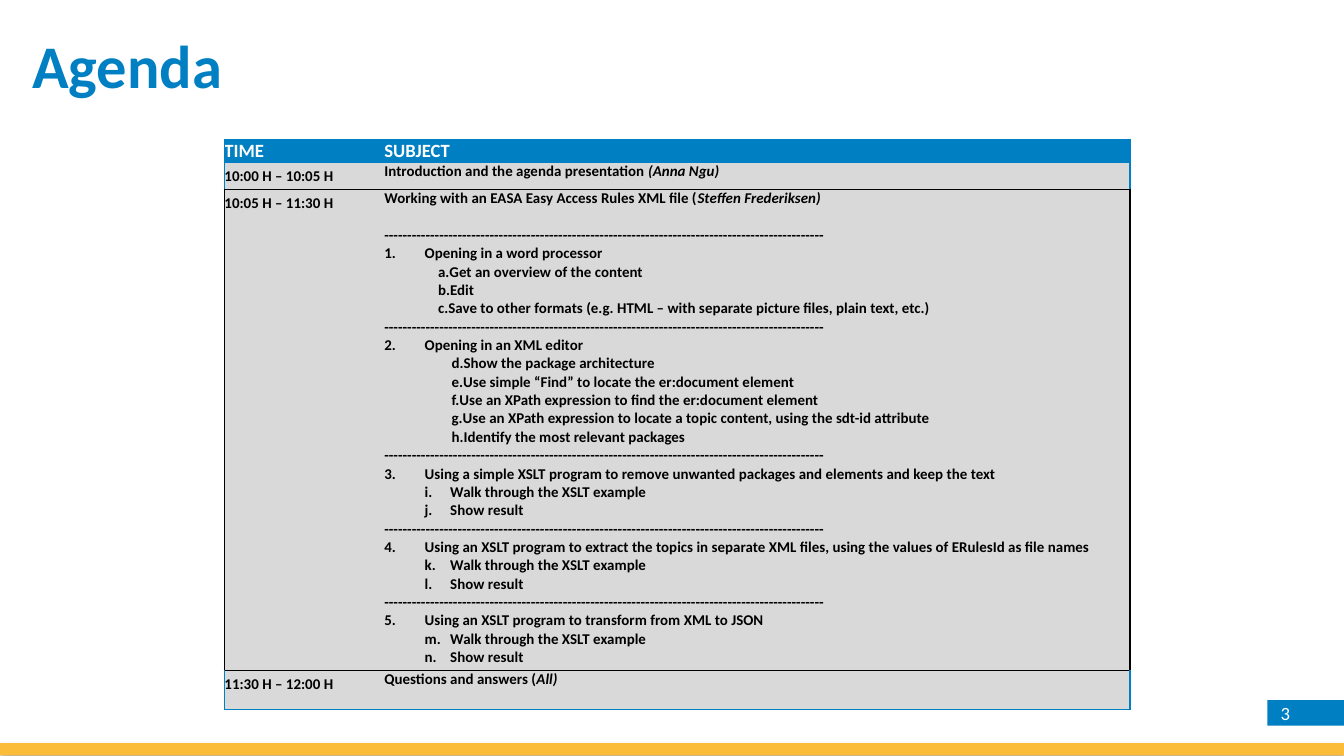
from lxml.etree import SubElement
from pptx import Presentation
from pptx.dml.color import RGBColor
from pptx.enum.shapes import MSO_SHAPE
from pptx.enum.text import MSO_ANCHOR
from pptx.oxml.ns import qn
from pptx.util import Inches, Pt

BLUE = RGBColor(0x00, 0x7F, 0xC2)
AMBER = RGBColor(0xFB, 0xBC, 0x39)
GREY = RGBColor(0xD9, 0xD9, 0xD9)
WHITE = RGBColor(0xFF, 0xFF, 0xFF)
BLACK = RGBColor(0x00, 0x00, 0x00)

NO_STYLE = "{2D5ABB26-0587-4C30-8999-92F81FD0307C}"
RULE = "-" * 96
EXAMPLE = ["Walk through the XSLT example", "Show result"]
TOPICS = [
    ("Opening in a word processor", 0.3, 0.1, [
        "Get an overview of the content",
        "Edit",
        "Save to other formats (e.g. HTML – with separate picture files, plain text, etc.)",
    ]),
    ("Opening in an XML editor", 0.3, 0.2, [
        "Show the package architecture",
        "Use simple “Find” to locate the er:document element",
        "Use an XPath expression to find the er:document element",
        "Use an XPath expression to locate a topic content, using the sdt-id attribute",
        "Identify the most relevant packages",
    ]),
    ("Using a simple XSLT program to remove unwanted packages and elements and keep the text",
     0.49, -0.19, EXAMPLE),
    ("Using an XSLT program to extract the topics in separate XML files, "
     "using the values of ERulesId as file names", 0.49, -0.19, EXAMPLE),
    ("Using an XSLT program to transform from XML to JSON", 0.49, -0.19, EXAMPLE),
]
SESSIONS = [
    ("10:00 H – 10:05 H", "Introduction and the agenda presentation ", "(Anna Ngu)"),
    ("10:05 H – 11:30 H", "Working with an EASA Easy Access Rules XML file (", "Steffen Frederiksen)"),
    ("11:30 H – 12:00 H", "Questions and answers (", "All)"),
]


class AgendaSlide:
    """Draws the elements of the agenda slide in one style."""

    def __init__(self, presentation, font="Calibri"):
        self.slide = presentation.slides.add_slide(presentation.slide_layouts[6])
        self.font = font

    def run(self, paragraph, text, size=8, color=BLACK, bold=True, italic=False):
        run = paragraph.add_run()
        run.text = text
        run.font.name = self.font
        run.font.size = Pt(size)
        run.font.color.rgb = color
        run.font.bold = bold
        run.font.italic = italic

    def bar(self, left, top, width, height, color):
        shape = self.slide.shapes.add_shape(
            MSO_SHAPE.RECTANGLE, Inches(left), Inches(top), Inches(width), Inches(height))
        shape.shadow.inherit = False
        shape.fill.solid()
        shape.fill.fore_color.rgb = color
        shape.line.fill.background()
        return shape

    def drop_shadow(self, shape):
        effects = shape._element.spPr.find(qn("a:effectLst"))
        shadow = SubElement(effects, qn("a:outerShdw"), blurRad=str(Pt(3.1)),
                            dist=str(Pt(1.8)), dir="5400000", rotWithShape="0")
        color = SubElement(shadow, qn("a:srgbClr"), val=str(BLACK))
        SubElement(color, qn("a:alpha"), val="35000")

    def title(self, text, left, top, width, height):
        box = self.slide.shapes.add_textbox(
            Inches(left), Inches(top), Inches(width), Inches(height))
        frame = box.text_frame
        frame.word_wrap = True
        frame.margin_left = 0
        frame.vertical_anchor = MSO_ANCHOR.MIDDLE
        self.run(frame.paragraphs[0], text, 32.4, BLUE)

    def page_number(self, text, left, top, width, height):
        frame = self.bar(left, top, width, height, BLUE).text_frame
        frame.vertical_anchor = MSO_ANCHOR.MIDDLE
        frame.margin_top = frame.margin_bottom = 0
        paragraph = frame.paragraphs[0]
        paragraph._p.get_or_add_pPr().set("algn", "l")
        self.run(paragraph, text, 10, WHITE, bold=False)

    def table(self, left, top, widths, heights):
        frame = self.slide.shapes.add_table(
            len(heights), len(widths), Inches(left), Inches(top),
            Inches(sum(widths)), Inches(sum(heights)))
        table = frame.table
        table._tbl.tblPr.find(qn("a:tableStyleId")).text = NO_STYLE
        for column, width in zip(table.columns, widths):
            column.width = Inches(width)
        for row, height in zip(table.rows, heights):
            row.height = Inches(height)
        return table

    def cell(self, cell, fill, borders):
        cell.margin_left = cell.margin_right = cell.margin_top = cell.margin_bottom = 0
        properties = cell._tc.get_or_add_tcPr()
        for side, color in borders.items():
            line = SubElement(properties, qn(f"a:ln{side}"), w=str(Pt(1)))
            solid = SubElement(line, qn("a:solidFill"))
            SubElement(solid, qn("a:srgbClr"), val=str(color))
        cell.fill.solid()
        cell.fill.fore_color.rgb = fill
        return cell.text_frame.paragraphs[0]

    def line(self, frame, text, margin=0, indent=0, lettered=False):
        paragraph = frame.add_paragraph()
        properties = paragraph._p.get_or_add_pPr()
        properties.set("marL", str(Inches(margin)))
        properties.set("indent", str(Inches(indent)))
        if lettered:
            paragraph.level = 1
            SubElement(properties, qn("a:buFont"), typeface="+mj-lt")
            SubElement(properties, qn("a:buAutoNum"), type="alphaLcPeriod")
        self.run(paragraph, text)
        return paragraph

    def topics(self, frame):
        for number, (heading, margin, indent, steps) in enumerate(TOPICS, 1):
            rule = self.line(frame, RULE)
            if number == 1:
                rule.space_before = Pt(9.75)
            self.line(frame, f"{number}. \t{heading}", 0.3, -0.3)
            for step in steps:
                self.line(frame, step, margin, indent, lettered=True)

    def agenda(self):
        table = self.table(1.67, 1.04, [1.19, 5.55], [0.17, 0.2, 3.58, 0.29])
        edges = [BLUE, BLUE, BLACK, BLACK, BLUE]
        sides = [BLUE, BLUE, BLACK, BLUE]
        for row, side in enumerate(sides):
            for column, edge in enumerate("LR"):
                borders = {edge: side, "T": edges[row], "B": edges[row + 1]}
                cell = table.cell(row, column)
                paragraph = self.cell(cell, GREY if row else BLUE, borders)
                if row == 0:
                    self.run(paragraph, ("TIME", "SUBJECT")[column], 10, WHITE)
                    continue
                time, subject, speaker = SESSIONS[row - 1]
                if column == 0:
                    paragraph.line_spacing = Pt(12.5)
                    self.run(paragraph, time)
                else:
                    self.run(paragraph, subject)
                    self.run(paragraph, speaker, italic=True)
        self.topics(table.cell(2, 1).text_frame)


def main():
    presentation = Presentation()
    presentation.slide_width = Inches(10)
    presentation.slide_height = Inches(10 * 9 / 16)
    agenda_slide = AgendaSlide(presentation)
    agenda_slide.drop_shadow(agenda_slide.bar(0, 5.53, 10, 0.09, AMBER))
    agenda_slide.page_number("3", 9.43, 5.21, 0.57, 0.19)
    agenda_slide.title("Agenda", 0.24, 0.16, 9.56, 0.64)
    agenda_slide.agenda()
    presentation.save("out.pptx")


if __name__ == "__main__":
    main()
